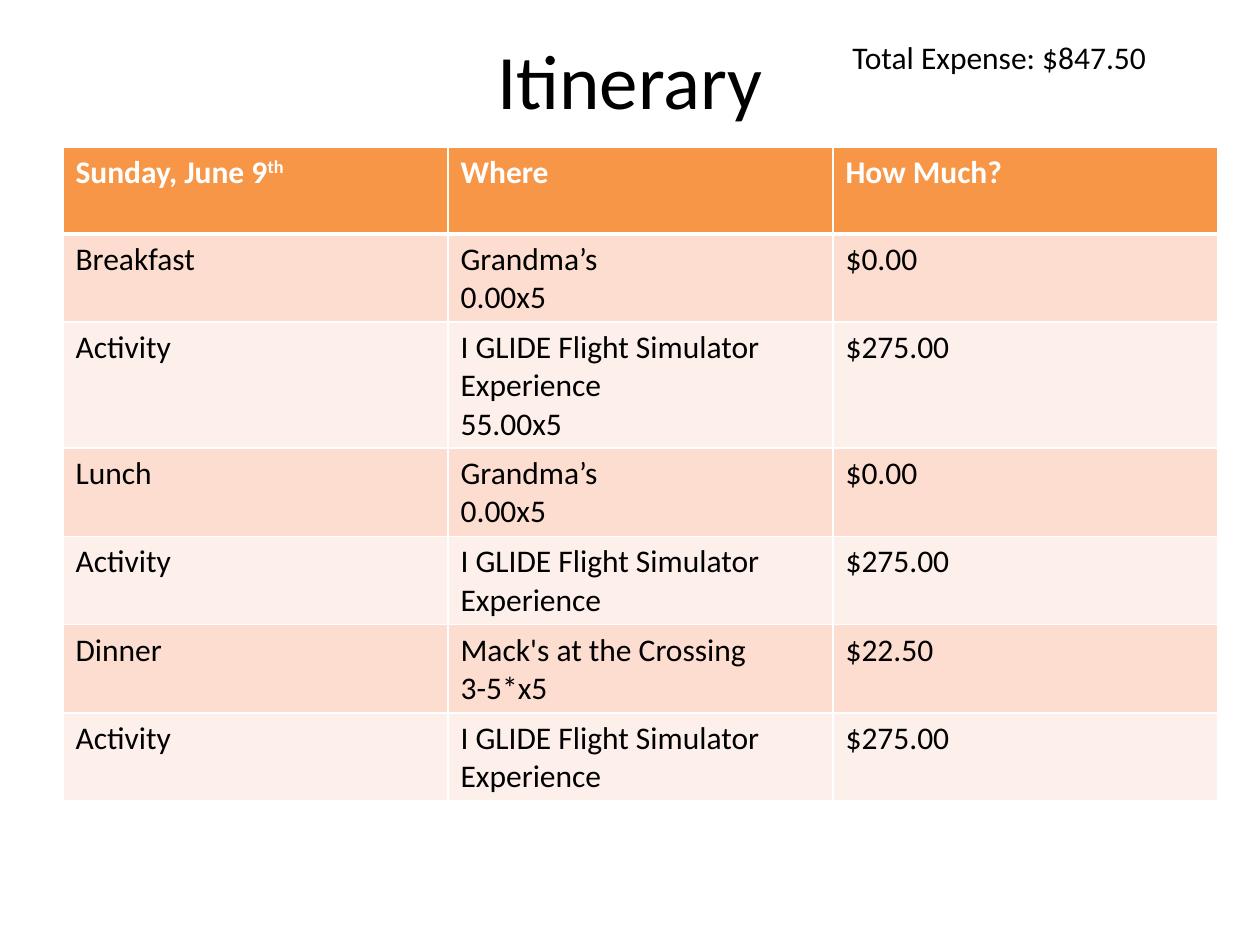
"""Build the itinerary slide with its daily schedule and costs."""
from dataclasses import dataclass

from lxml import etree
from pptx import Presentation
from pptx import util as u
from pptx.dml import color
from pptx.enum import text
from pptx.oxml import ns


@dataclass(frozen=True)
class Theme:
    font: str = "Calibri"
    ink: str = "000000"
    paper: str = "FFFFFF"
    header: str = "F79646"
    bands: tuple = ("FCDDCF", "FDEFE9")
    title_size: float = 44
    body_size: float = 18
    rule: float = 1
    header_rule: float = 3


class SlideBuilder:
    def __init__(self, slide, theme):
        self.slide = slide
        self.theme = theme

    def style(self, paragraph, size, ink, bold=False):
        font = paragraph.font
        font.name = self.theme.font
        font.size = u.Pt(size)
        font.bold = bold
        font.color.rgb = color.RGBColor.from_string(ink)

    def label(self, box, words, size, align=text.PP_ALIGN.LEFT,
              anchor=text.MSO_ANCHOR.TOP):
        frame = self.slide.shapes.add_textbox(*map(u.Pt, box)).text_frame
        frame.word_wrap = True
        frame.vertical_anchor = anchor
        paragraph = frame.paragraphs[0]
        paragraph.text = words
        paragraph.alignment = align
        self.style(paragraph, size, self.theme.ink)

    def border(self, cell, side, width):
        properties = cell._tc.get_or_add_tcPr()
        line = etree.SubElement(properties, ns.qn(f"a:ln{side}"), w=str(u.Pt(width)))
        fill = etree.SubElement(line, ns.qn("a:solidFill"))
        etree.SubElement(fill, ns.qn("a:srgbClr"), val=self.theme.paper)

    def cell(self, cell, words, row):
        theme = self.theme
        is_header = row == 0
        fill = theme.header if is_header else theme.bands[(row - 1) % 2]
        ink = theme.paper if is_header else theme.ink
        for side in "LRTB":
            under_header = (row, side) in ((0, "B"), (1, "T"))
            self.border(cell, side, theme.header_rule if under_header else theme.rule)
        cell.fill.solid()
        cell.fill.fore_color.rgb = color.RGBColor.from_string(fill)
        cell.text = words
        for paragraph in cell.text_frame.paragraphs:
            self.style(paragraph, theme.body_size, ink, is_header)

    def table(self, box, row_height, rows):
        frame = self.slide.shapes.add_table(len(rows), len(rows[0]), *map(u.Pt, box))
        table = frame.table
        for row, entries in enumerate(rows):
            table.rows[row].height = u.Pt(row_height)
            for column, words in enumerate(entries):
                self.cell(table.cell(row, column), words, row)
        return table

    def superscript(self, paragraph, words):
        suffix = paragraph.add_run()
        suffix.text = words
        suffix._r.get_or_add_rPr().set("baseline", "30000")


def main():
    deck = Presentation()
    deck.slide_width, deck.slide_height = u.Pt(720), u.Pt(540)
    theme = Theme()
    builder = SlideBuilder(deck.slides.add_slide(deck.slide_layouts[6]), theme)

    builder.label((36, 0, 648, 90), "Itinerary", theme.title_size,
                  text.PP_ALIGN.CENTER, text.MSO_ANCHOR.MIDDLE)
    builder.label((480, 18, 222, 29), "Total Expense: $847.50", theme.body_size)

    flight = "I GLIDE Flight Simulator Experience"
    grandma = "Grandma’s\n0.00x5"
    schedule = [
        ("Sunday, June 9", "Where", "How Much?"),
        ("Breakfast", grandma, "$0.00"),
        ("Activity", f"{flight}\n55.00x5", "$275.00"),
        ("Lunch", grandma, "$0.00"),
        ("Activity", flight, "$275.00"),
        ("Dinner", "Mack's at the Crossing\n3-5*x5", "$22.50"),
        ("Activity", flight, "$275.00"),
    ]
    row_height = 49.7
    itinerary = builder.table((36, 84, 660, row_height * len(schedule)),
                              row_height, schedule)
    builder.superscript(itinerary.cell(0, 0).text_frame.paragraphs[0], "th")

    deck.save("out.pptx")


if __name__ == "__main__":
    main()
